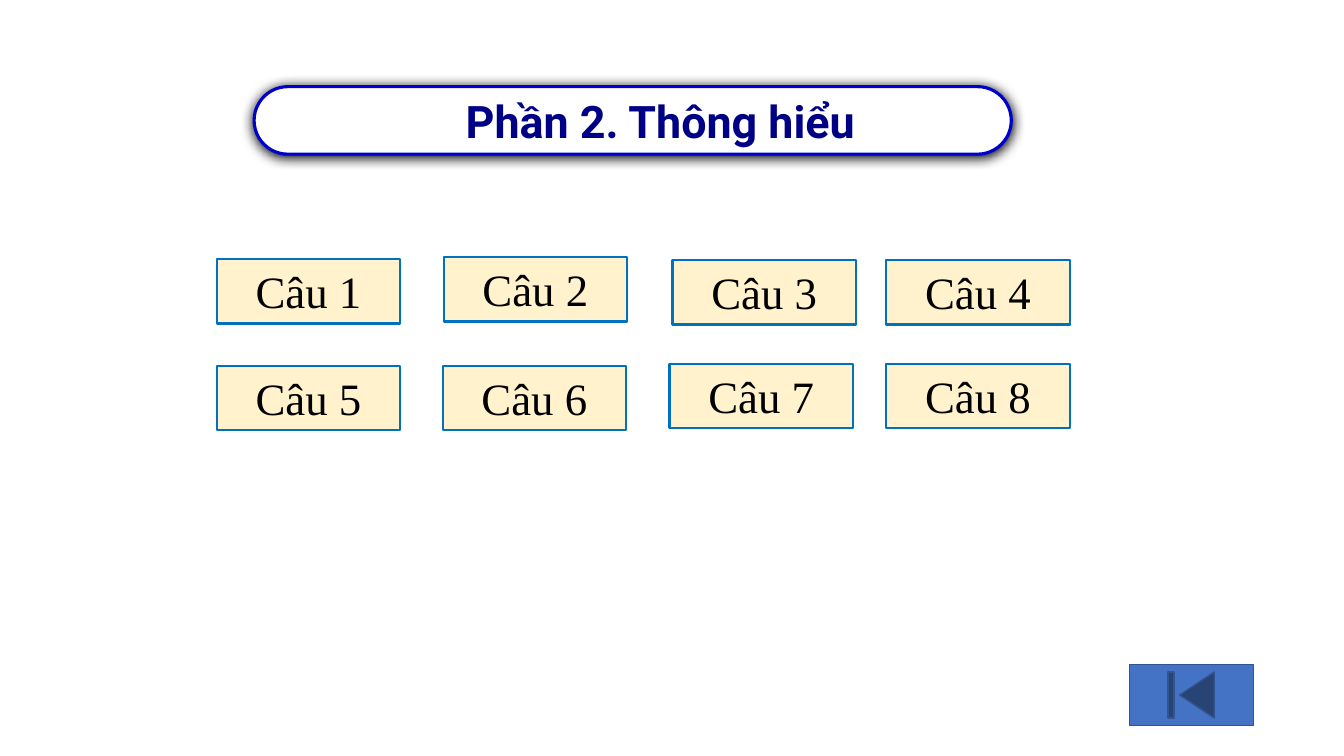
from dataclasses import dataclass

from lxml import etree
from pptx import Presentation
from pptx.dml.color import RGBColor
from pptx.enum.shapes import MSO_SHAPE
from pptx.enum.text import MSO_ANCHOR, MSO_AUTO_SIZE, PP_ALIGN
from pptx.oxml import parse_xml
from pptx.util import Inches, Pt


@dataclass(frozen=True)
class Theme:
    title_fill: str = "FFFFFF"
    title_line: str = "0000CC"
    title_text: str = "000086"
    title_font: str = "Roboto"
    question_fill: str = "FFF2CC"
    question_line: str = "0070C0"
    question_text: str = "000000"
    question_font: str = "Times New Roman"
    button_fill: str = "4472C4"
    button_line: str = "325491"
    shadow: str = "000000"
    text_size: int = 32


theme = Theme()


def add_box(kind, place, fill, line, line_width):
    box = page.shapes.add_shape(kind, *[Inches(length) for length in place])
    box.shadow.inherit = False
    box.fill.solid()
    box.fill.fore_color.rgb = RGBColor.from_string(fill)
    box.line.color.rgb = RGBColor.from_string(line)
    box.line.width = Pt(line_width)
    return box


def write_label(box, text, font, color, bold=False):
    para = box.text_frame.paragraphs[0]
    para.alignment = PP_ALIGN.CENTER
    span = para.add_run()
    span.text = text
    span.font.name = font
    span.font.size = Pt(theme.text_size)
    span.font.bold = bold
    span.font.color.rgb = RGBColor.from_string(color)


deck = Presentation()
deck.slide_width = Inches(13.33)
deck.slide_height = Inches(7.5)
page = deck.slides.add_slide(deck.slide_layouts[6])

# Title pill with a soft shadow
title = add_box(MSO_SHAPE.ROUNDED_RECTANGLE, (2.52, 0.86, 7.51, 0.67),
                theme.title_fill, theme.title_line, 2.25)
title.adjustments[0] = 0.5
title.text_frame.vertical_anchor = MSO_ANCHOR.MIDDLE
title.text_frame.margin_left = Inches(0.65)
write_label(title, "Phần 2. Thông hiểu", theme.title_font, theme.title_text, bold=True)

namespace = "http://schemas.openxmlformats.org/drawingml/2006/main"
effects = title.element.spPr.find(etree.QName(namespace, "effectLst"))
effects.append(parse_xml(
    f'<a:outerShdw xmlns:a="{namespace}" blurRad="{Pt(8.5)}" dist="{Pt(1)}" '
    f'dir="5400000" algn="ctr" rotWithShape="0">'
    f'<a:srgbClr val="{theme.shadow}"/></a:outerShdw>'))

# Question boxes, numbered along each row
question_corners = [
    (2.15, 2.57), (4.4, 2.55), (6.67, 2.58), (8.79, 2.58),
    (2.15, 3.63), (4.39, 3.63), (6.64, 3.61), (8.79, 3.61),
]
for number, (left, top) in enumerate(question_corners, start=1):
    question = add_box(MSO_SHAPE.RECTANGLE, (left, top, 1.82, 0.64),
                       theme.question_fill, theme.question_line, 1.5)
    question.text_frame.word_wrap = True
    question.text_frame.vertical_anchor = MSO_ANCHOR.TOP
    question.text_frame.auto_size = MSO_AUTO_SIZE.SHAPE_TO_FIT_TEXT
    write_label(question, f"Câu {number}", theme.question_font, theme.question_text)

# Button back to the beginning
add_box(MSO_SHAPE.ACTION_BUTTON_BEGINNING, (11.2, 6.59, 1.23, 0.61),
        theme.button_fill, theme.button_line, 1)

deck.save("out.pptx")
